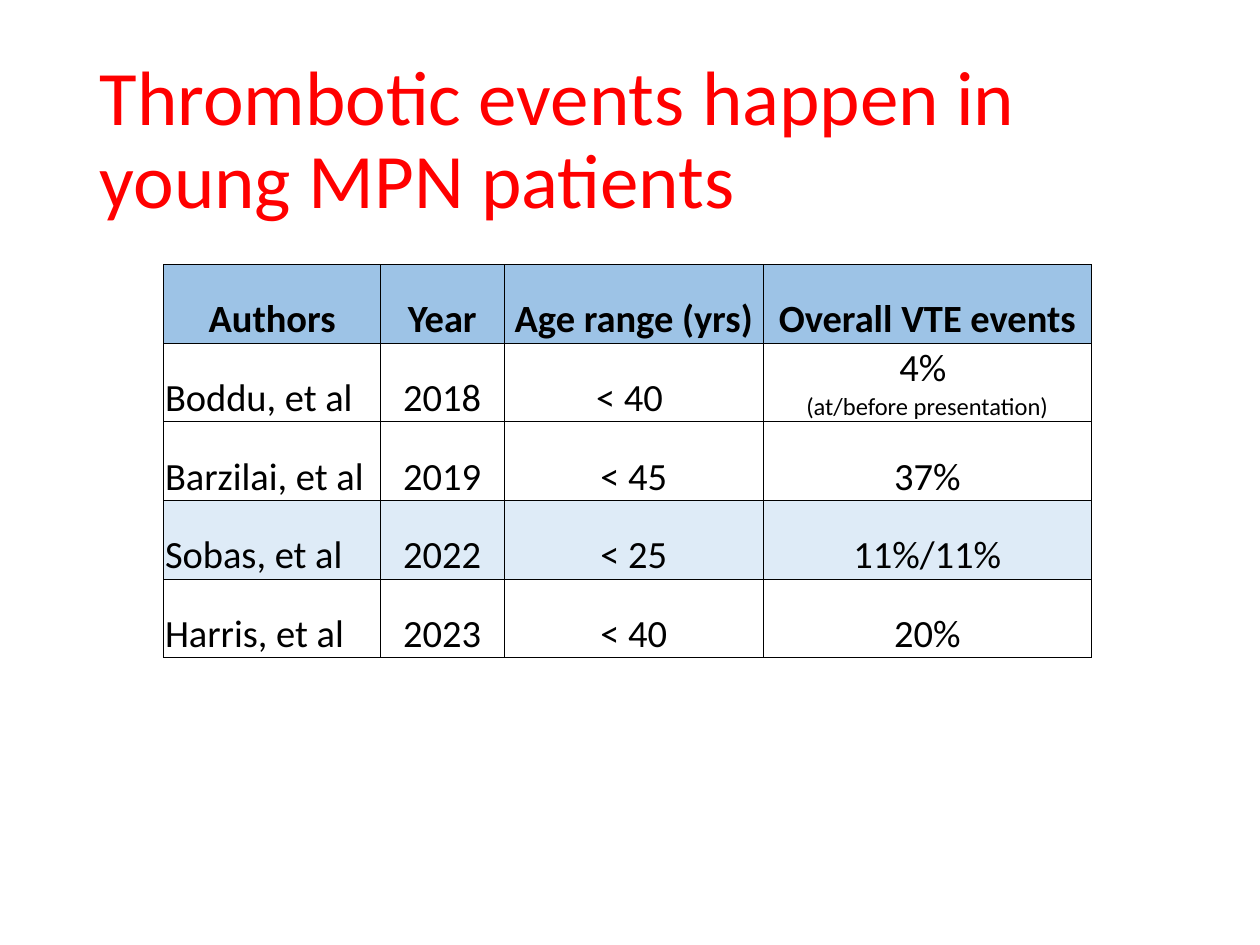
"""Build the slide on thrombotic events in young MPN patients."""
from dataclasses import dataclass

from lxml.etree import SubElement
from pptx import Presentation
from pptx.dml.color import RGBColor
from pptx.enum.text import MSO_ANCHOR, PP_ALIGN
from pptx.oxml.ns import qn
from pptx.util import Inches, Pt


@dataclass(frozen=True)
class Theme:
    font: str = "Calibri"
    title_color: str = "FF0000"
    text_color: str = "000000"
    border_color: str = "000000"
    header_fill: str = "9DC3E6"
    highlight_fill: str = "DEEBF7"
    title_size: int = 44
    body_size: int = 22
    note_size: int = 14
    border_width: float = 0.5


theme = Theme()


def style(paragraph, size, color, bold=False):
    for run in paragraph.runs:
        run.font.name = theme.font
        run.font.size = Pt(size)
        run.font.bold = bold
        run.font.color.rgb = RGBColor.from_string(color)


def add_borders(cell):
    properties = cell._tc.get_or_add_tcPr()
    for side in ("a:lnL", "a:lnR", "a:lnT", "a:lnB"):
        line = SubElement(properties, qn(side), w=str(Pt(theme.border_width)))
        fill = SubElement(line, qn("a:solidFill"))
        SubElement(fill, qn("a:srgbClr"), val=theme.border_color)


presentation = Presentation()
presentation.slide_width = Inches(10)
presentation.slide_height = Inches(7.5)
slide = presentation.slides.add_slide(presentation.slide_layouts[5])

title = slide.shapes.title
title.left, title.top = Inches(0.69), Inches(0.4)
title.width, title.height = Inches(8.62), Inches(1.45)
title.text_frame.text = "Thrombotic events happen in young MPN patients"
title.text_frame.word_wrap = True
title.text_frame.vertical_anchor = MSO_ANCHOR.MIDDLE
heading = title.text_frame.paragraphs[0]
heading.alignment = PP_ALIGN.LEFT
heading.line_spacing = 0.9
style(heading, theme.title_size, theme.title_color)

studies = [
    ("Authors", "Year", "Age range (yrs)", "Overall VTE events"),
    ("Boddu, et al", "2018", "< 40 ", "4% \n(at/before presentation)"),
    ("Barzilai, et al", "2019", "< 45", "37%"),
    ("Sobas, et al", "2022", "< 25", "11%/11%"),
    ("Harris, et al", "2023", "< 40", "20%"),
]
column_widths = (1.72, 0.98, 2.06, 2.6)
row_fills = {0: theme.header_fill, 3: theme.highlight_fill}
table_height = Inches(3.12)

events = slide.shapes.add_table(
    len(studies), len(column_widths),
    Inches(1.3), Inches(2.1), Inches(sum(column_widths)), table_height,
).table
events.first_row = False
events.horz_banding = False
for column, width in zip(events.columns, column_widths):
    column.width = Inches(width)

for row_index, study in enumerate(studies):
    events.rows[row_index].height = table_height // len(studies)
    for column_index, entry in enumerate(study):
        cell = events.cell(row_index, column_index)
        cell.vertical_anchor = MSO_ANCHOR.BOTTOM
        cell.margin_left = cell.margin_right = cell.margin_top = Inches(0.01)
        cell.margin_bottom = Inches(0)
        add_borders(cell)
        if row_index in row_fills:
            cell.fill.solid()
            cell.fill.fore_color.rgb = RGBColor.from_string(row_fills[row_index])
        else:
            cell.fill.background()
        cell.text_frame.text = entry
        is_header = row_index == 0
        is_author = column_index == 0 and not is_header
        for line_index, paragraph in enumerate(cell.text_frame.paragraphs):
            paragraph.alignment = PP_ALIGN.LEFT if is_author else PP_ALIGN.CENTER
            size = theme.note_size if line_index else theme.body_size
            style(paragraph, size, theme.text_color, is_header)

presentation.save("out.pptx")
